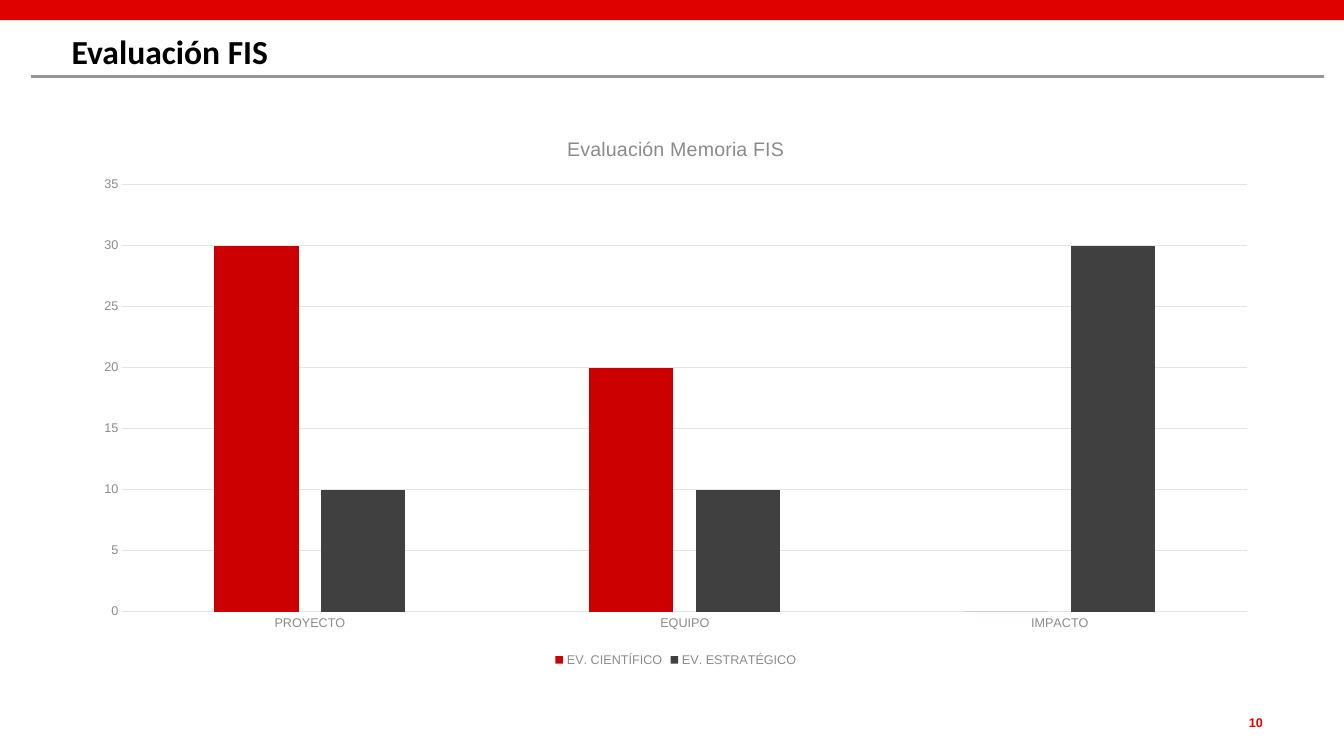
from dataclasses import dataclass
from typing import Any

from lxml.etree import SubElement
from pptx import Presentation
from pptx.chart.data import CategoryChartData
from pptx.dml.color import RGBColor
from pptx.enum.chart import XL_CHART_TYPE as ChartType
from pptx.enum.chart import XL_LEGEND_POSITION as LegendPosition
from pptx.enum.chart import XL_TICK_MARK as TickMark
from pptx.enum.shapes import MSO_CONNECTOR as ConnectorType
from pptx.enum.shapes import MSO_SHAPE as ShapeType
from pptx.enum.text import MSO_ANCHOR as Anchor
from pptx.enum.text import PP_ALIGN as Align
from pptx.oxml.ns import qn
from pptx.util import Pt

RED, RULE_GREY = "DF0000", "969696"
LABEL_GREY, GRID_GREY = "8B8B8B", "E4E4E4"


@dataclass
class Box:
    left: float
    top: float
    width: float
    height: float

    def lengths(self) -> tuple:
        return tuple(Pt(v) for v in (self.left, self.top, self.width, self.height))


@dataclass
class Criterion:
    name: str
    scores: tuple
    color: str


CATEGORIES = ("PROYECTO", "EQUIPO", "IMPACTO")
CRITERIA = (
    Criterion("EV. CIENTÍFICO", (30, 20, 0), "CC0000"),
    Criterion("EV. ESTRATÉGICO", (10, 10, 30), "404040"),
)


def apply(target: Any, values: dict) -> None:
    for name, value in values.items():
        setattr(target, name, value)


def set_color(color_format: Any, color: str) -> None:
    color_format.rgb = RGBColor.from_string(color)


def set_fill(fill: Any, color: str) -> None:
    fill.solid()
    set_color(fill.fore_color, color)


def set_line(line: Any, color: str, width: float) -> None:
    set_fill(line.fill, color)
    line.width = Pt(width)


def set_font(font: Any, size: float, color: str, name: str = "Arial", bold: bool = False) -> None:
    apply(font, {"name": name, "size": Pt(size), "bold": bold})
    set_color(font.color, color)


def set_frame(frame: Any, margin: float, anchor: Any) -> None:
    sides = ("left", "top", "right", "bottom")
    apply(frame, {f"margin_{side}": Pt(margin) for side in sides})
    apply(frame, {"word_wrap": True, "vertical_anchor": anchor})


def add_header(slide: Any) -> None:
    band = slide.shapes.add_shape(ShapeType.RECTANGLE, *Box(0, 0, 960, 14.4).lengths())
    band.shadow.inherit = False
    set_fill(band.fill, RED)
    band.line.fill.background()

    rule = slide.shapes.add_connector(
        ConnectorType.STRAIGHT, Pt(22.3), Pt(54.7), Pt(945.4), Pt(54.7))
    set_line(rule.line, RULE_GREY, 2.25)
    SubElement(rule._element.spPr, qn("a:effectLst"))


def add_title(slide: Any) -> None:
    title = slide.shapes.title
    box = Box(47.5, 21.6, 879.8, 33.8).lengths()
    apply(title, dict(zip(("left", "top", "width", "height"), box)))
    set_frame(title.text_frame, 3.6, Anchor.MIDDLE)
    title.text_frame.text = "Evaluación FIS"
    paragraph = title.text_frame.paragraphs[0]
    apply(paragraph, {"alignment": Align.LEFT, "line_spacing": 0.9})
    set_font(paragraph.runs[0].font, 24, "010000", "Calibri", True)


def add_page_number(slide: Any) -> None:
    number = slide.shapes.add_textbox(*Box(811.4, 510.5, 90.7, 10.8).lengths())
    set_frame(number.text_frame, 0, Anchor.TOP)
    number.text_frame.text = "10"
    paragraph = number.text_frame.paragraphs[0]
    paragraph.alignment = Align.RIGHT
    set_font(paragraph.runs[0].font, 9, RED, bold=True)


def add_score_chart(slide: Any) -> None:
    data = CategoryChartData()
    data.categories = CATEGORIES
    for criterion in CRITERIA:
        data.add_series(criterion.name, criterion.scores)
    box = Box(57.6, 82.8, 850.3, 396.7).lengths()
    chart = slide.shapes.add_chart(ChartType.COLUMN_CLUSTERED, *box, data).chart
    set_font(chart.font, 10, "4D4D4D")

    # Chart title and legend
    chart.has_title = True
    chart.chart_title.include_in_layout = False
    chart.chart_title.text_frame.text = "Evaluación Memoria FIS"
    set_font(chart.chart_title.text_frame.paragraphs[0].runs[0].font, 14, LABEL_GREY)
    chart.has_legend = True
    apply(chart.legend, {"position": LegendPosition.BOTTOM, "include_in_layout": False})
    set_font(chart.legend.font, 9, LABEL_GREY)

    # Axes
    for axis in (chart.category_axis, chart.value_axis):
        apply(axis, {"major_tick_mark": TickMark.NONE, "minor_tick_mark": TickMark.NONE})
        set_font(axis.tick_labels.font, 9, LABEL_GREY)
    set_line(chart.category_axis.format.line, GRID_GREY, 0.75)
    scores = chart.value_axis
    apply(scores, {"minimum_scale": 0, "maximum_scale": 35, "major_unit": 5,
                   "has_major_gridlines": True})
    scores.format.line.fill.background()
    set_line(scores.major_gridlines.format.line, GRID_GREY, 0.75)

    # Columns
    plot = chart.plots[0]
    apply(plot, {"gap_width": 219, "overlap": -27, "vary_by_categories": False})
    for series, criterion in zip(plot.series, CRITERIA):
        set_fill(series.format.fill, criterion.color)
        series.invert_if_negative = False


def main() -> None:
    presentation = Presentation()
    apply(presentation, {"slide_width": Pt(960), "slide_height": Pt(540)})
    slide = presentation.slides.add_slide(presentation.slide_layouts[5])
    set_fill(slide.background.fill, "FFFFFF")
    add_page_number(slide)
    add_header(slide)
    add_title(slide)
    add_score_chart(slide)
    presentation.save("out.pptx")


if __name__ == "__main__":
    main()
